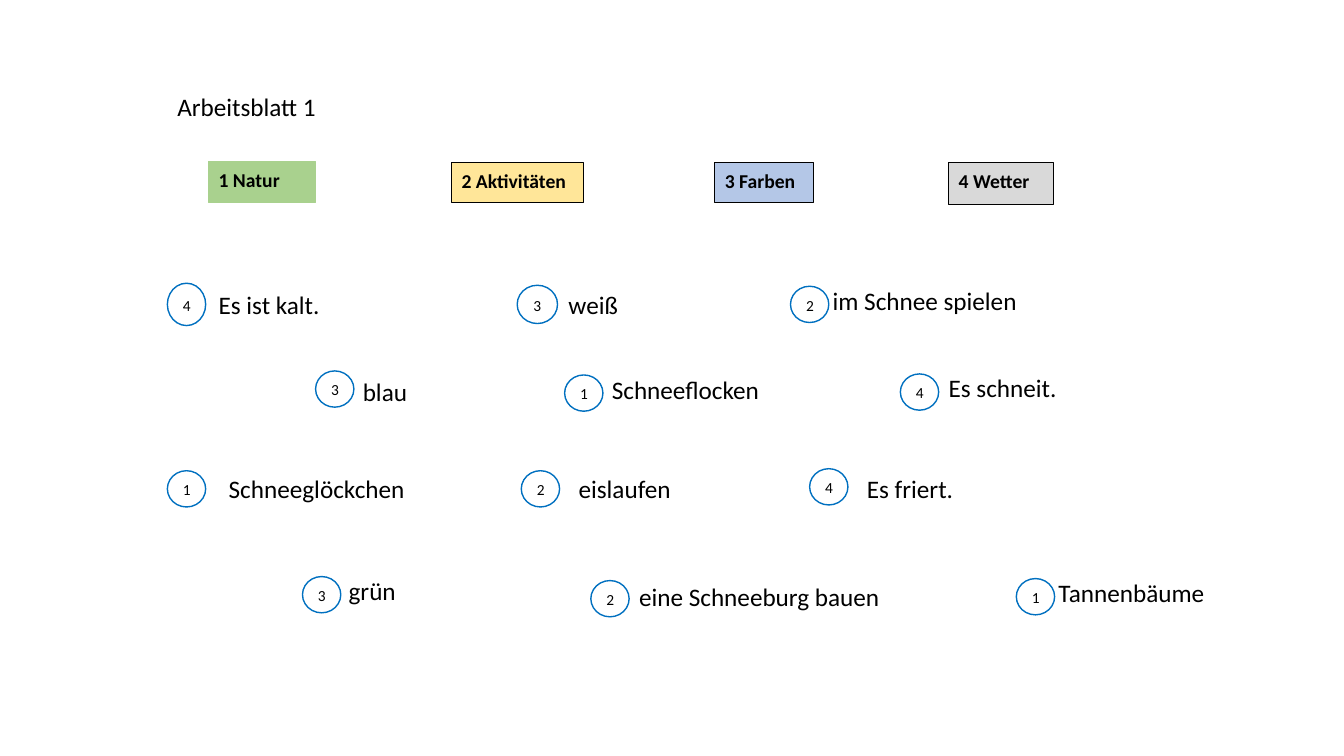
from dataclasses import dataclass

import pptx
import pptx.dml.color
import pptx.enum.shapes
import pptx.enum.text
import pptx.util

Inches = pptx.util.Inches
Pt = pptx.util.Pt
Kind = pptx.enum.shapes.MSO_SHAPE
Anchor = pptx.enum.text.MSO_ANCHOR
Align = pptx.enum.text.PP_ALIGN
Fit = pptx.enum.text.MSO_AUTO_SIZE


@dataclass
class Box:
    left: float
    top: float
    width: float
    height: float = 0.4

    def place(self) -> list:
        return [Inches(n) for n in (self.left, self.top, self.width, self.height)]


@dataclass
class Topic:
    text: str
    box: Box
    fill: str
    line: str = "000000"


@dataclass
class Item:
    """A phrase with the number of its topic in a ring."""
    topic: int
    ring: Box
    text: str
    box: Box


def ring(left: float, top: float, width: float = 0.38, height: float = 0.36) -> Box:
    return Box(left, top, width, height)


TOPICS = [
    Topic("1 Natur", Box(2.07, 1.6, 1.06, 0.41), "A9D18E", "A9D18E"),
    Topic("2 Aktivitäten", Box(4.48, 1.61, 1.31), "FFE699"),
    Topic("3 Farben", Box(7.09, 1.61, 0.98), "B4C7E7"),
    Topic("4 Wetter", Box(9.41, 1.61, 1.04, 0.42), "D9D9D9"),
]

ITEMS = [
    Item(4, ring(1.66, 2.81, height=0.42), "Es ist kalt.", Box(2.07, 2.82, 1.25)),
    Item(3, ring(5.13, 2.83, 0.4, 0.38), "weiß", Box(5.54, 2.82, 0.7)),
    Item(2, ring(7.84, 2.84), "im Schnee spielen", Box(8.16, 2.78, 2.21)),
    Item(3, ring(3.13, 3.68), "blau", Box(3.5, 3.68, 0.7)),
    Item(1, ring(5.6, 3.72), "Schneeflocken", Box(5.97, 3.66, 1.67)),
    Item(4, ring(8.93, 3.71), "Es schneit.", Box(9.31, 3.64, 1.31)),
    Item(1, ring(1.66, 4.67), "Schneeglöckchen", Box(2.17, 4.65, 2.03)),
    Item(2, ring(5.17, 4.67), "eislaufen", Box(5.64, 4.65, 1.31)),
    Item(4, ring(8.03, 4.65), "Es friert.", Box(8.5, 4.65, 1.24)),
    Item(3, ring(3, 5.72), "grün", Box(3.36, 5.66, 0.7)),
    Item(2, ring(5.86, 5.76), "eine Schneeburg bauen", Box(6.24, 5.72, 2.69)),
    Item(1, ring(10.08, 5.74), "Tannenbäume", Box(10.4, 5.68, 1.94)),
]


def color(code: str) -> pptx.dml.color.RGBColor:
    return pptx.dml.color.RGBColor.from_string(code)


def write(shape, text: str, size: int, bold: bool = False):
    """Put one line of text in the shape and return its paragraph."""
    frame = shape.text_frame
    frame.word_wrap = True
    para = frame.paragraphs[0]
    para.text = text
    para.font.name = "Calibri"
    para.font.size = Pt(size)
    para.font.bold = bold
    para.font.color.rgb = color("000000")
    return para


def label(slide, text: str, box: Box) -> None:
    shape = slide.shapes.add_textbox(*box.place())
    write(shape, text, 18)
    shape.text_frame.auto_size = Fit.SHAPE_TO_FIT_TEXT


def badge(slide, kind, box: Box, fill: str, line: str, weight: float,
          text: str, size: int, bold: bool, anchor, align) -> None:
    """Draw a filled, outlined shape with text."""
    shape = slide.shapes.add_shape(kind, *box.place())
    shape.shadow.inherit = False
    shape.fill.solid()
    shape.fill.fore_color.rgb = color(fill)
    shape.line.color.rgb = color(line)
    shape.line.width = Pt(weight)
    para = write(shape, text, size, bold)
    para.alignment = align
    para.line_spacing = 1.07
    para.space_after = Pt(8)
    shape.text_frame.vertical_anchor = anchor


def main() -> None:
    deck = pptx.Presentation()
    deck.slide_width = Inches(13.33)
    deck.slide_height = Inches(7.5)
    slide = deck.slides.add_slide(deck.slide_layouts[6])

    for topic in TOPICS:
        badge(slide, Kind.RECTANGLE, topic.box, topic.fill, topic.line, 0.75,
              topic.text, 14, True, Anchor.TOP, Align.LEFT)
    label(slide, "Arbeitsblatt 1", Box(1.66, 0.86, 4.31))
    for item in ITEMS:
        badge(slide, Kind.OVAL, item.ring, "FFFFFF", "0070C0", 1,
              str(item.topic), 11, False, Anchor.MIDDLE, Align.CENTER)
        label(slide, item.text, item.box)

    deck.save("out.pptx")


if __name__ == "__main__":
    main()
